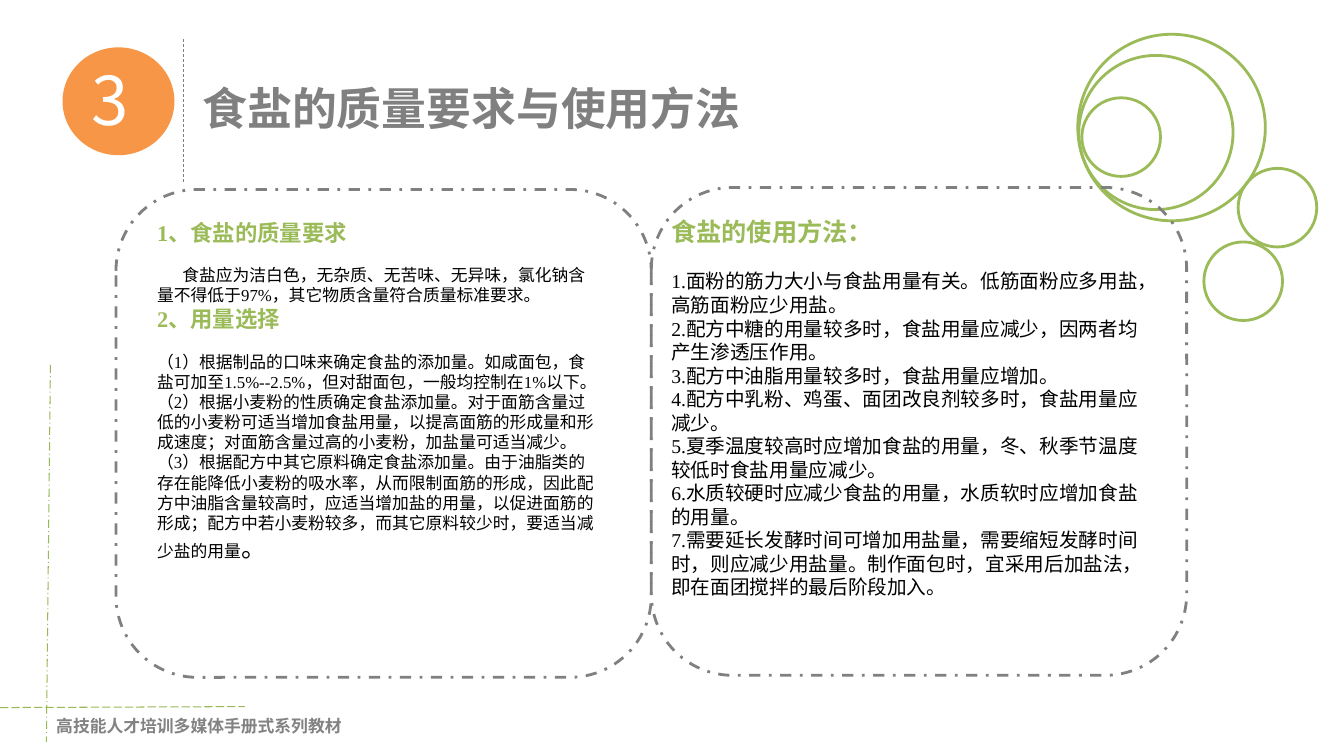
from pptx import Presentation
from pptx.dml.color import RGBColor
from pptx.enum.dml import MSO_LINE
from pptx.enum.shapes import MSO_CONNECTOR, MSO_SHAPE
from pptx.oxml.ns import qn
from pptx.util import Inches, Pt
from lxml.etree import SubElement

SERIF, SANS = "Times New Roman", "Noto Sans CJK SC"
GREEN, PALE_GREEN, GREY, ORANGE = "9BBB59", "98B955", "808080", "F79646"
BLACK, WHITE = "000000", "FFFFFF"

FOOTER = "高技能人才培训多媒体手册式系列教材"
NUMBER = "3"
TITLE = "食盐的质量要求与使用方法"

# (kind, text); an "intro" is body text with an indented first line
QUALITY = [
    ("heading", "1、食盐的质量要求"),
    ("intro", "食盐应为洁白色，无杂质、无苦味、无异味，氯化钠含量不得低于97%，其它物质含量符合质量标准要求。"),
    ("heading", "2、用量选择"),
    ("body", "（1）根据制品的口味来确定食盐的添加量。如咸面包，食盐可加至1.5%--2.5%，但对甜面包，一般均控制在1%以下。"),
    ("body", "（2）根据小麦粉的性质确定食盐添加量。对于面筋含量过低的小麦粉可适当增加食盐用量，以提高面筋的形成量和形成速度；对面筋含量过高的小麦粉，加盐量可适当减少。"),
    ("body", "（3）根据配方中其它原料确定食盐添加量。由于油脂类的存在能降低小麦粉的吸水率，从而限制面筋的形成，因此配方中油脂含量较高时，应适当增加盐的用量，以促进面筋的形成；配方中若小麦粉较多，而其它原料较少时，要适当减少盐的用量"),
]
LAST_STOP = "。"
USAGE = [
    ("heading", "食盐的使用方法："),
    ("body", "1.面粉的筋力大小与食盐用量有关。低筋面粉应多用盐，高筋面粉应少用盐。"),
    ("body", "2.配方中糖的用量较多时，食盐用量应减少，因两者均产生渗透压作用。"),
    ("body", "3.配方中油脂用量较多时，食盐用量应增加。"),
    ("body", "4.配方中乳粉、鸡蛋、面团改良剂较多时，食盐用量应减少。"),
    ("body", "5.夏季温度较高时应增加食盐的用量，冬、秋季节温度较低时食盐用量应减少。"),
    ("body", "6.水质较硬时应减少食盐的用量，水质软时应增加食盐的用量。"),
    ("body", "7.需要延长发酵时间可增加用盐量，需要缩短发酵时间时，则应减少用盐量。制作面包时，宜采用后加盐法，即在面团搅拌的最后阶段加入。"),
]

# left, top, width, height in inches
RINGS = [
    (10.69, 0.34, 1.86, 1.85),
    (10.7, 0.55, 1.53, 1.53),
    (12.28, 1.67, 0.78, 0.78),
    (10.73, 0.97, 0.78, 0.78),
    (11.94, 2.4, 0.78, 0.78),
]
PANEL_LEFT, PANEL_WIDTH, PANEL_HEIGHT = 1.15, 5.31, 4.84
# panel top, text area, heading size, body size, paragraphs
PANELS = [
    (1.88, (1.46, 2.12, 4.58, 3.57), 16, 12, QUALITY),
    (1.86, (6.56, 2.1, 5, 3.94), 18, 14, USAGE),
]

deck = Presentation()
deck.slide_width, deck.slide_height = Inches(13.33), Inches(7.5)
page = deck.slides.add_slide(deck.slide_layouts[6])


def colour(code):
    return RGBColor.from_string(code)


def add_outline(kind, area, fill=None, line=None, dash=None):
    shape = page.shapes.add_shape(kind, *map(Inches, area))
    shape.shadow.inherit = False
    if fill:
        shape.fill.solid()
        shape.fill.fore_color.rgb = colour(fill)
    else:
        shape.fill.background()
    if line:
        shape.line.color.rgb = colour(line)
        shape.line.width = Pt(2)
        shape.line.dash_style = dash
    else:
        shape.line.fill.background()


def add_rule(start, end, line, width, dash):
    rule = page.shapes.add_connector(MSO_CONNECTOR.STRAIGHT, *map(Inches, start + end))
    rule.line.color.rgb = colour(line)
    rule.line.width = Pt(width)
    rule.line.dash_style = dash
    SubElement(rule._element.spPr, qn("a:effectLst"))


def add_text_frame(area, wrap=True):
    box = page.shapes.add_textbox(*map(Inches, area))
    box.text_frame.word_wrap = wrap
    return box.text_frame


def add_span(para, text, size, ink, bold=False, font=SERIF):
    span = para.add_run()
    span.text = text
    span.font.size, span.font.bold, span.font.name = Pt(size), bold, font
    span.font.color.rgb = colour(ink)
    SubElement(span.font._element, qn("a:ea")).set("typeface", SANS)


def add_label(area, text, size, ink, bold, font, wrap=True):
    add_span(add_text_frame(area, wrap).paragraphs[0], text, size, ink, bold, font)


def add_article(area, heading_size, body_size, content):
    """Write headings and body text, with one body line of space below each heading."""
    frame = add_text_frame(area)
    for index, (kind, text) in enumerate(content):
        para = frame.add_paragraph() if index else frame.paragraphs[0]
        if kind == "heading":
            para.space_after = Pt(body_size * 1.15)
            add_span(para, text, heading_size, GREEN, True)
        else:
            add_span(para, text, body_size, BLACK)
        if kind == "intro":
            para._p.get_or_add_pPr().set("indent", str(Inches(0.25)))
    return para


add_rule((0.5, 3.62), (0.46, 7.36), PALE_GREEN, 0.75, MSO_LINE.LONG_DASH_DOT)
add_rule((0, 7.02), (2.43, 7.01), PALE_GREEN, 0.75, MSO_LINE.LONG_DASH)
add_label((0.46, 7.05, 3.06, 0.3), FOOTER, 12, "828282", True, SERIF, wrap=False)
for ring in RINGS:
    add_outline(MSO_SHAPE.OVAL, ring, line=GREEN)

add_rule((1.82, 0.39), (1.82, 1.82), GREY, 0.5, MSO_LINE.DASH)
add_outline(MSO_SHAPE.OVAL, (0.62, 0.47, 1.11, 1.07), fill=ORANGE)
add_label((0.81, 0.53, 0.73, 0.91), NUMBER, 48, WHITE, False, SANS)
add_label((1.91, 0.75, 7.56, 0.64), TITLE, 32, GREY, True, SANS)

for column, (top, text_area, heading_size, body_size, content) in enumerate(PANELS):
    panel = (PANEL_LEFT + column * PANEL_WIDTH, top, PANEL_WIDTH, PANEL_HEIGHT)
    add_outline(MSO_SHAPE.ROUNDED_RECTANGLE, panel, line=GREY, dash=MSO_LINE.DASH_DOT)
    last_para = add_article(text_area, heading_size, body_size, content)
    if content is QUALITY:
        add_span(last_para, LAST_STOP, 18, BLACK)

deck.save("out.pptx")
